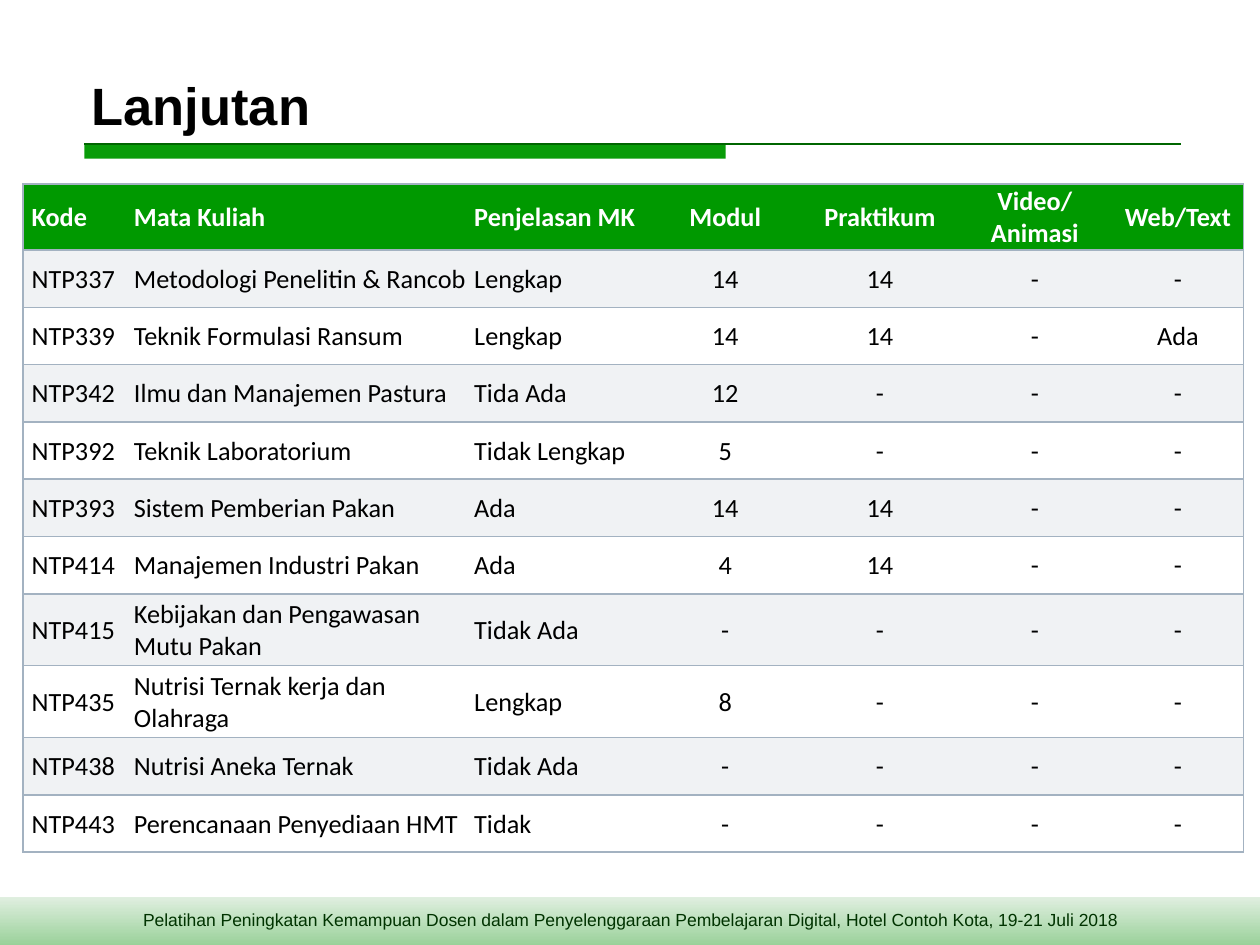
"""Build the course material status slide with python-pptx."""
from lxml import etree
from pptx import Presentation
from pptx import util as u
from pptx.dml.color import RGBColor
from pptx.enum import shapes, text
from pptx.oxml.ns import qn

TITLE = "Lanjutan"
FOOTER = ("Pelatihan Peningkatan Kemampuan Dosen dalam Penyelenggaraan "
          "Pembelajaran Digital, Hotel Contoh Kota, 19-21 Juli 2018")
COURSES = [
    ("Kode", "Mata Kuliah", "Penjelasan MK", "Modul", "Praktikum", "Video/ Animasi", "Web/Text"),
    ("NTP337", "Metodologi Penelitin & Rancob", "Lengkap", "14", "14", "-", "-"),
    ("NTP339", "Teknik Formulasi Ransum", "Lengkap", "14", "14", "-", "Ada"),
    ("NTP342", "Ilmu dan Manajemen Pastura", "Tida Ada", "12", "-", "-", "-"),
    ("NTP392", "Teknik Laboratorium", "Tidak Lengkap", "5", "-", "-", "-"),
    ("NTP393", "Sistem Pemberian Pakan", "Ada", "14", "14", "-", "-"),
    ("NTP414", "Manajemen Industri Pakan", "Ada", "4", "14", "-", "-"),
    ("NTP415", "Kebijakan dan Pengawasan Mutu Pakan", "Tidak Ada", "-", "-", "-", "-"),
    ("NTP435", "Nutrisi Ternak kerja dan Olahraga", "Lengkap", "8", "-", "-", "-"),
    ("NTP438", "Nutrisi Aneka Ternak", "Tidak Ada", "-", "-", "-", "-"),
    ("NTP443", "Perencanaan Penyediaan HMT", "Tidak", "-", "-", "-", "-"),
]
COLUMN_WIDTHS = [2.21, 6.86, 3.53, 3.12, 3.12, 3.12, 2.65]
ROW_HEIGHT, HEADER_HEIGHT, TWO_LINE_HEIGHT = 1.155, 1.33, 1.45
TWO_LINE_COURSES = {"NTP415", "NTP435"}
FIRST_CENTRED_COLUMN = 3

THEME = {
    "accent": "009900", "rule": "006600", "border": "A3B2C1",
    "bands": ("FFFFFF", "F0F2F4"), "footer_fade": ("E0EFE0", "95CF95"),
    "title": {"name": "Arial", "size": u.Pt(30), "bold": True, "color": "000000"},
    "footer": {"name": "Arial", "size": u.Pt(10), "bold": False, "color": "003300"},
    "header": {"name": "Calibri", "size": u.Pt(15), "bold": True, "color": "FFFFFF"},
    "body": {"name": "Calibri", "size": u.Pt(15), "bold": False, "color": "000000"},
}
CELL_FORMAT = {
    "margin_left": u.Cm(0.03), "margin_right": u.Cm(0.03),
    "margin_top": u.Cm(0.03), "margin_bottom": 0,
    "vertical_anchor": text.MSO_ANCHOR.MIDDLE,
}


def apply_format(target, values):
    for name, value in values.items():
        if name == "color":
            target.color.rgb = RGBColor.from_string(value)
        else:
            setattr(target, name, value)


def paint(fill, colour):
    fill.solid()
    fill.fore_color.rgb = RGBColor.from_string(colour)


def write(frame, wording, style, alignment):
    paragraph = frame.paragraphs[0]
    paragraph.alignment = alignment
    run = paragraph.add_run()
    run.text = wording
    apply_format(run.font, THEME[style])


def add_words(slide, box, wording, style, alignment, anchor):
    frame = slide.shapes.add_textbox(*map(u.Cm, box)).text_frame
    apply_format(frame, {"word_wrap": True, "vertical_anchor": anchor})
    write(frame, wording, style, alignment)


def add_bar(slide, box):
    bar = slide.shapes.add_shape(shapes.MSO_SHAPE.RECTANGLE, *map(u.Cm, box))
    bar.shadow.inherit = False
    bar.line.fill.background()
    return bar


def add_title(slide):
    left, top = 1.7, 2.9
    accent = add_bar(slide, (left, top, 12.93, 0.3))
    paint(accent.fill, THEME["accent"])
    colour = next(accent.element.spPr.iter(qn("a:srgbClr")))
    etree.SubElement(colour, qn("a:alpha"), val="97000")
    rule = slide.shapes.add_connector(
        shapes.MSO_CONNECTOR.STRAIGHT, *map(u.Cm, (left, top, 23.8, top)))
    rule.line.width = u.Pt(0.75)
    rule.line.color.rgb = RGBColor.from_string(THEME["rule"])
    etree.SubElement(rule.element.spPr, qn("a:effectLst"))
    add_words(slide, (1.6, 0.84, 22.22, 2.03), TITLE, "title",
              text.PP_ALIGN.LEFT, text.MSO_ANCHOR.BOTTOM)


def add_footer(slide):
    band = add_bar(slide, (0, 18.08, 25.45, 1.04))
    band.fill.gradient()
    band.fill.gradient_angle = 270
    for stop, colour in zip(band.fill.gradient_stops, THEME["footer_fade"]):
        stop.color.rgb = RGBColor.from_string(colour)
    add_words(slide, (0.46, 18.21, 24.48, 0.69), FOOTER, "footer",
              text.PP_ALIGN.CENTER, text.MSO_ANCHOR.TOP)


def set_borders(cell, visible):
    properties = cell._tc.get_or_add_tcPr()
    for position, side in enumerate("LRTB"):
        line = etree.Element(qn(f"a:ln{side}"), w=str(u.Pt(1)))
        if side in visible:
            fill = etree.SubElement(line, qn("a:solidFill"))
            etree.SubElement(fill, qn("a:srgbClr"), val=THEME["border"])
        else:
            etree.SubElement(line, qn("a:noFill"))
        properties.insert(position, line)


def add_courses(slide):
    heights = [HEADER_HEIGHT] + [
        TWO_LINE_HEIGHT if course[0] in TWO_LINE_COURSES else ROW_HEIGHT
        for course in COURSES[1:]]
    box = (0.46, 3.71, sum(COLUMN_WIDTHS), sum(heights))
    courses = slide.shapes.add_table(
        len(COURSES), len(COLUMN_WIDTHS), *map(u.Cm, box)).table
    courses.horz_banding = False
    for column, width in zip(courses.columns, COLUMN_WIDTHS):
        column.width = u.Cm(width)
    last = len(COLUMN_WIDTHS) - 1
    for r, (course, height) in enumerate(zip(COURSES, heights)):
        courses.rows[r].height = u.Cm(height)
        style, band = ("body", THEME["bands"][r % 2]) if r else ("header", THEME["accent"])
        for c, wording in enumerate(course):
            cell = courses.cell(r, c)
            apply_format(cell, CELL_FORMAT)
            if c == 0:
                cell.margin_left = u.Cm(0.18)
            paint(cell.fill, band)
            set_borders(cell, "TB" + {0: "L", last: "R"}.get(c, ""))
            centred = c >= FIRST_CENTRED_COLUMN
            write(cell.text_frame, wording, style,
                  text.PP_ALIGN.CENTER if centred else text.PP_ALIGN.LEFT)


def main():
    deck = Presentation()
    apply_format(deck, {"slide_width": u.Cm(25.4), "slide_height": u.Cm(19.05)})
    slide = deck.slides.add_slide(deck.slide_layouts[6])
    add_footer(slide)
    add_title(slide)
    add_courses(slide)
    deck.save("out.pptx")


if __name__ == "__main__":
    main()
